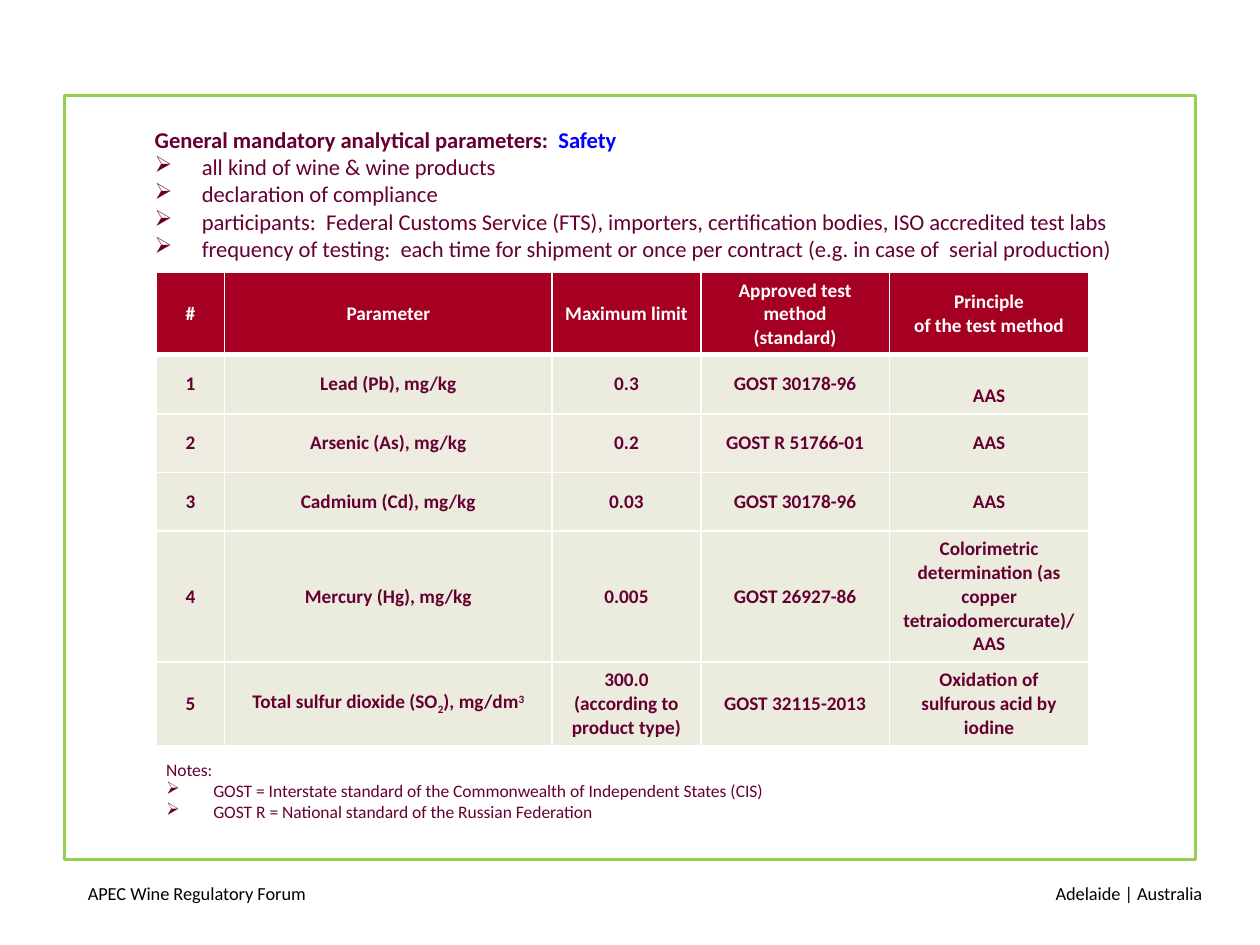
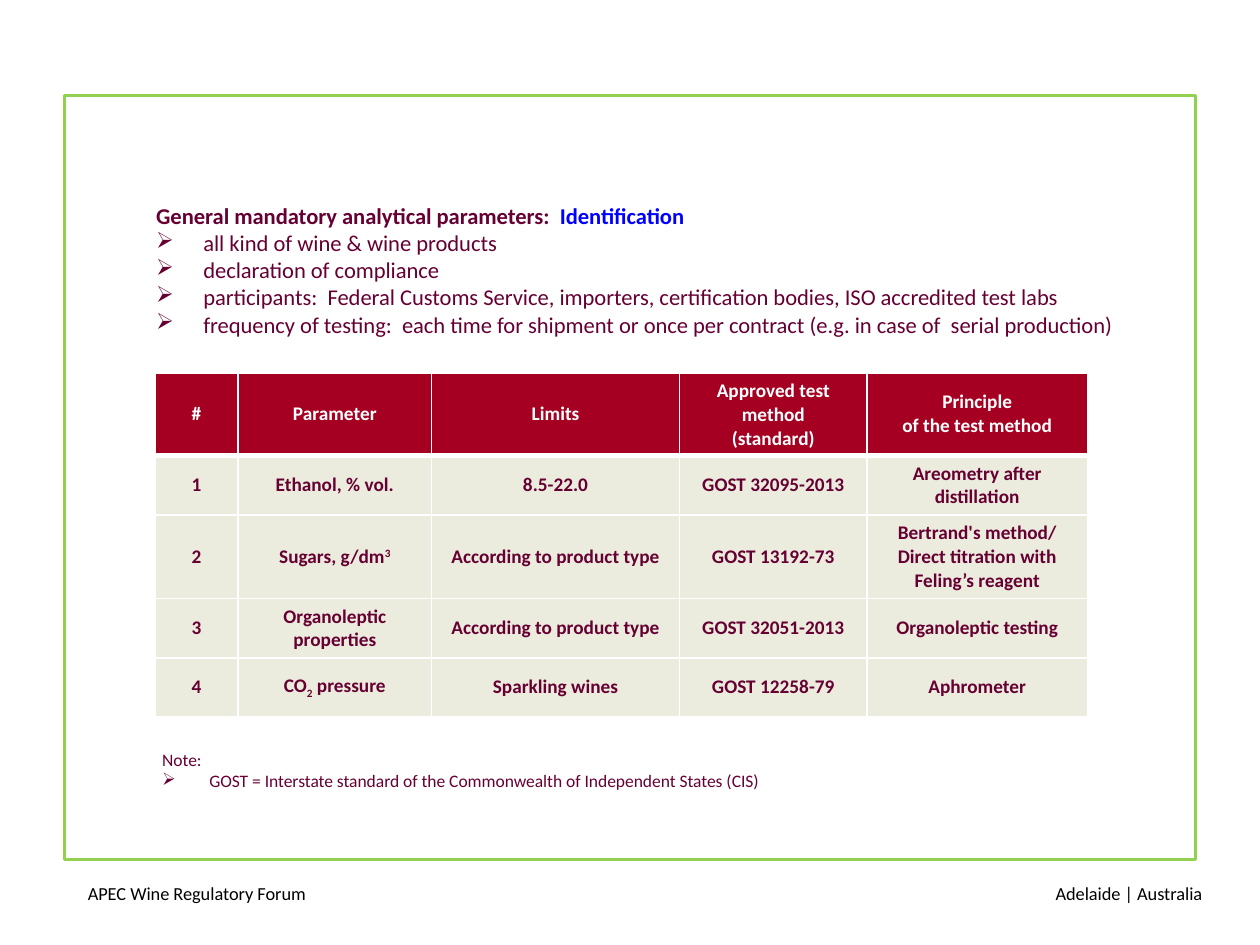
from itertools import groupby

from lxml import etree
from pptx import Presentation
from pptx.dml import color
from pptx.enum import shapes, text
from pptx.oxml import ns
from pptx import util as u

FONT = "Calibri"
WINE, RED, BLUE, GREEN = "660033", "A50021", "0000FF", "92D050"
BLACK, WHITE, SAND, LIGHT_SAND = "000000", "FFFFFF", "ECECDE", "EEECE1"
BULLET_INDENT = u.Cm(0.95)
SCRIPTS = {"₂": ("2", -25), "³": ("3", 30)}

PARTICIPANTS = "importers, certification bodies, ISO accredited test labs"
GOST_NOTE = "GOST = Interstate standard of the Commonwealth of Independent States (CIS)"
METHOD_HEADINGS = ("Approved test method\n(standard)", "Principle\nof the test method")

SAFETY_ROWS = [
    ("#", "Parameter", "Maximum limit", *METHOD_HEADINGS),
    ("1", "Lead (Pb), mg/kg", "0.3", "GOST 30178-96", "AAS"),
    ("2", "Arsenic (As), mg/kg", "0.2", "GOST R 51766-01", "AAS"),
    ("3", "Cadmium (Cd), mg/kg", "0.03", "GOST 30178-96", "AAS"),
    ("4", "Mercury (Hg), mg/kg", "0.005", "GOST 26927-86",
     "Colorimetric determination (as copper tetraiodomercurate)/ AAS"),
    ("5", "Total sulfur dioxide (SO₂), mg/dm³", "300.0\n(according to product type)",
     "GOST 32115-2013", "Oxidation of sulfurous acid by iodine"),
]
IDENTIFICATION_ROWS = [
    ("#", "Parameter", "Limits", *METHOD_HEADINGS),
    ("1", "Ethanol, % vol.", "8.5-22.0", "GOST 32095-2013", "Areometry after distillation"),
    ("2", "Sugars, g/dm³", "According to product type", "GOST 13192-73",
     "Bertrand's method/\nDirect titration with Feling’s reagent"),
    ("3", "Organoleptic\nproperties", "According to product type", "GOST 32051-2013",
     "Organoleptic testing"),
    ("4", "CO₂ pressure", "Sparkling wines", "GOST 12258-79", "Aphrometer"),
]


def rgb(value):
    return color.RGBColor.from_string(value)


def add_span(para, words, size, ink, bold=False, baseline=0):
    span = para.add_run()
    span.text = words
    font = span.font
    font.name, font.size, font.bold = FONT, u.Pt(size), bold
    font.color.rgb = rgb(ink)
    if baseline:
        font._element.set("baseline", f"{baseline * 1000}")


def add_scripted(para, words, size, ink, bold):
    """Add words, lowering or raising the sub- and superscript digits."""
    for mark, letters in groupby(words, lambda letter: letter if letter in SCRIPTS else ""):
        piece, baseline = SCRIPTS.get(mark) or ("".join(letters), 0)
        add_span(para, piece, size, ink, bold, baseline)


def add_box(page, left, top, width, height, anchor):
    box = page.shapes.add_textbox(u.Cm(left), u.Cm(top), u.Cm(width), u.Cm(height))
    frame = box.text_frame
    frame.word_wrap = True
    frame.vertical_anchor = anchor
    return frame


def add_bullets(frame, lines, size):
    for line in lines:
        para = frame.add_paragraph()
        properties = para._p.get_or_add_pPr()
        properties.set("marL", str(BULLET_INDENT))
        properties.set("indent", str(-BULLET_INDENT))
        etree.SubElement(properties, ns.qn("a:buChar")).set("char", "➢")
        add_span(para, line, size, WINE)


def add_page(deck):
    """Add a blank page with the green frame and both footers."""
    page = deck.slides.add_slide(deck.slide_layouts[6])
    border = page.shapes.add_shape(shapes.MSO_SHAPE.RECTANGLE,
                                   u.Cm(1.3), u.Cm(1.93), u.Cm(22.8), u.Cm(15.4))
    border.shadow.inherit = False
    border.fill.background()
    border.line.color.rgb = rgb(GREEN)
    border.line.width = u.Pt(2)
    for left, words, align in ((1.52, "APEC Wine Regulatory Forum", text.PP_ALIGN.LEFT),
                               (18.52, "Adelaide | Australia", text.PP_ALIGN.RIGHT)):
        para = add_box(page, left, 17.65, 5.97, 1.02, text.MSO_ANCHOR.TOP).paragraphs[0]
        para.alignment = align
        add_span(para, words, 10.5, BLACK)
    return page


def add_intro(page, left, top, topic, customs):
    frame = add_box(page, left, top, 20.4, 2.8, text.MSO_ANCHOR.MIDDLE)
    heading = frame.paragraphs[0]
    add_span(heading, "General mandatory analytical parameters:  ", 12.9, WINE, True)
    add_span(heading, topic, 12.9, BLUE, True)
    add_bullets(frame, [
        "all kind of wine & wine products",
        "declaration of compliance",
        f"participants:  {customs}, {PARTICIPANTS}",
        "frequency of testing:  each time for shipment or once per contract"
        " (e.g. in case of  serial production)",
    ], 12.9)


def add_notes(page, left, top, label, lines):
    frame = add_box(page, left, top, 19.6, 2.4, text.MSO_ANCHOR.MIDDLE)
    add_span(frame.paragraphs[0], label, 10, WINE)
    add_bullets(frame, lines, 10)


def set_borders(cell, widths):
    properties = cell._tc.get_or_add_tcPr()
    for side, width in widths.items():
        line = etree.SubElement(properties, ns.qn(f"a:ln{side}"), w=str(u.Pt(width)))
        fill = etree.SubElement(line, ns.qn("a:solidFill"))
        etree.SubElement(fill, ns.qn("a:srgbClr"), val=WHITE)


def fill_cell(cell, words, ink, ground, borders):
    set_borders(cell, borders)
    cell.fill.solid()
    cell.fill.fore_color.rgb = rgb(ground)
    cell.vertical_anchor = text.MSO_ANCHOR.MIDDLE
    frame = cell.text_frame
    for index, line in enumerate(words.split("\n")):
        para = frame.add_paragraph() if index else frame.paragraphs[0]
        para.alignment = text.PP_ALIGN.CENTER
        add_scripted(para, line, 11, ink, True)


def add_parameter_table(page, left, top, widths, heights, rows):
    graphic = page.shapes.add_table(len(rows), len(widths), u.Cm(left), u.Cm(top),
                                    u.Cm(sum(widths)), u.Cm(sum(heights)))
    table = graphic.table
    table.horz_banding = False
    for column, width in zip(table.columns, widths):
        column.width = u.Cm(width)
    for index, (row, height, entries) in enumerate(zip(table.rows, heights, rows)):
        row.height = u.Cm(height)
        ink, ground = (WINE, SAND) if index else (WHITE, RED)
        borders = {"L": 1, "R": 1, "T": 3 if index == 1 else 1, "B": 1 if index else 3}
        for cell, words in zip(row.cells, entries):
            fill_cell(cell, words, ink, ground, borders)
    return table


def safety_page(deck):
    page = add_page(deck)
    table = add_parameter_table(page, 3.15, 5.49, (1.38, 6.6, 3, 3.8, 4.02),
                                (1.66, 1.18, 1.18, 1.18, 2.64, 1.68), SAFETY_ROWS)
    table.cell(1, 4).margin_top = u.Cm(0.6)
    for column in range(4):
        table.cell(2, column).fill.fore_color.rgb = rgb(LIGHT_SAND)
    add_intro(page, 2.87, 2.51, "Safety", "Federal Customs Service (FTS)")
    add_notes(page, 3.1, 14.73, "Notes:",
              [GOST_NOTE, "GOST R = National standard of the Russian Federation"])


def identification_page(deck):
    page = add_page(deck)
    add_parameter_table(page, 3.12, 7.52, (1.68, 3.9, 5, 3.78, 4.44),
                        (1.66, 1.2, 1.68, 1.2, 1.18), IDENTIFICATION_ROWS)
    add_notes(page, 3.02, 14.33, "Note:", [GOST_NOTE])
    add_intro(page, 2.9, 4.04, "Identification", "Federal Customs Service")


def main():
    deck = Presentation()
    deck.slide_width, deck.slide_height = u.Cm(25.4), u.Cm(19.05)
    safety_page(deck)
    identification_page(deck)
    deck.save("out.pptx")


if __name__ == "__main__":
    main()
